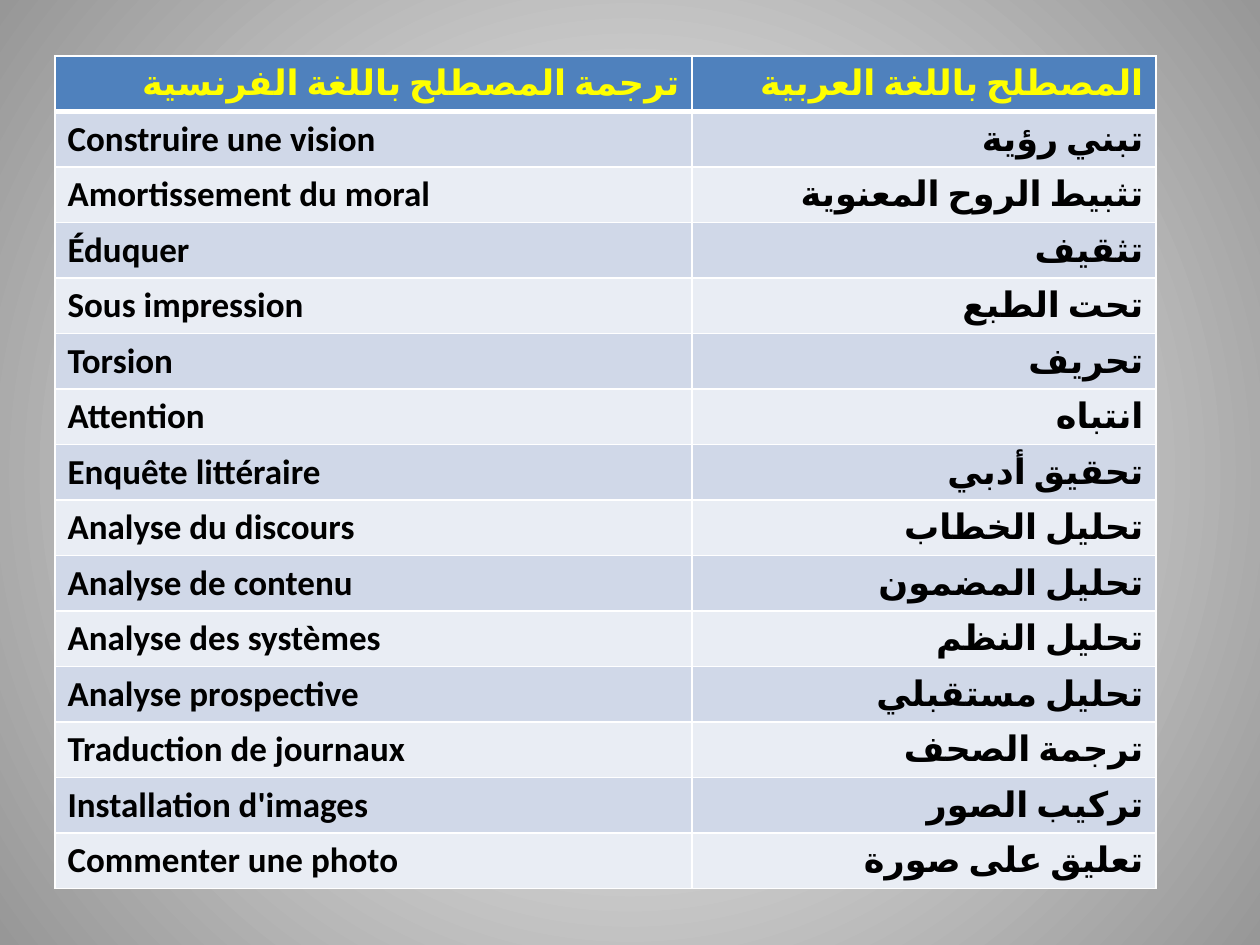
from typing import NamedTuple

from lxml import etree
from pptx import Presentation
from pptx.dml.color import RGBColor
from pptx.enum.lang import MSO_LANGUAGE_ID
from pptx.enum.text import PP_ALIGN
from pptx.oxml.ns import qn
from pptx.util import Emu, Pt

LEFT, RIGHT = PP_ALIGN.LEFT, PP_ALIGN.RIGHT
ARABIC, FRENCH = MSO_LANGUAGE_ID.ARABIC_ALGERIA, MSO_LANGUAGE_ID.FRENCH
EMU_PER_PX = 914400 / 126
FONT = "Calibri"
COLORS = {
    "header": "4F81BD",
    "header_text": "FFFF00",
    "band_dark": "D0D8E8",
    "band_light": "E9EDF4",
    "text": "000000",
    "border": "FFFFFF",
    "glow": "FFFFFF",
    "edge": "979797",
}


class Term(NamedTuple):
    french: str
    arabic: str


HEADER = Term("ترجمة المصطلح باللغة الفرنسية", "المصطلح باللغة العربية")
TERMS = [
    Term("Construire une vision", "تبني رؤية"),
    Term("Amortissement du moral", "تثبيط الروح المعنوية"),
    Term("Éduquer", "تثقيف"),
    Term("Sous impression", "تحت الطبع"),
    Term("Torsion", "تحريف"),
    Term("Attention", "انتباه"),
    Term("Enquête littéraire", "تحقيق أدبي"),
    Term("Analyse du discours", "تحليل الخطاب"),
    Term("Analyse de contenu", "تحليل المضمون"),
    Term("Analyse des systèmes", "تحليل النظم"),
    Term("Analyse prospective", "تحليل مستقبلي"),
    Term("Traduction de journaux", "ترجمة الصحف"),
    Term("Installation d'images", "تركيب الصور"),
    Term("Commenter une photo", "تعليق على صورة"),
]


def px(value: int) -> Emu:
    return Emu(round(value * EMU_PER_PX))


def rgb(name: str) -> RGBColor:
    return RGBColor.from_string(COLORS[name])


def paint_background(slide) -> None:
    """Fill the slide with a gradient spreading from its centre."""
    fill = slide.background.fill
    fill.gradient()
    for stop, position, color in zip(fill.gradient_stops, (0, 1), ("glow", "edge")):
        stop.position = position
        stop.color.rgb = rgb(color)
    gradient = next(slide.background._cSld.iter(qn("a:gradFill")))
    linear = gradient.find(qn("a:lin"))
    if linear is not None:
        gradient.remove(linear)
    circle = etree.SubElement(gradient, qn("a:path"), path="circle")
    centre = dict.fromkeys("ltrb", "50000")
    etree.SubElement(circle, qn("a:fillToRect"), centre)


def write(cell, text: str, *, color: str, rtl: bool) -> None:
    paragraph = cell.text_frame.paragraphs[0]
    paragraph.alignment = RIGHT if rtl else LEFT
    if rtl:
        paragraph._p.get_or_add_pPr().set("rtl", "1")
    run = paragraph.add_run()
    run.text = text
    run.font.name = FONT
    run.font.size = Pt(20)
    run.font.bold = True
    run.font.color.rgb = rgb(color)
    run.font.language_id = ARABIC if rtl else FRENCH
    # Arabic letters take the complex-script typeface
    etree.SubElement(run._r.get_or_add_rPr(), qn("a:cs"), typeface=FONT)


def set_borders(cell, *, top: int = 1, bottom: int = 1) -> None:
    properties = cell._tc.get_or_add_tcPr()
    widths = {"lnL": 1, "lnR": 1, "lnT": top, "lnB": bottom}
    for index, (side, width) in enumerate(widths.items()):
        line = etree.Element(qn(f"a:{side}"), w=str(Pt(width)))
        solid = etree.SubElement(line, qn("a:solidFill"))
        etree.SubElement(solid, qn("a:srgbClr"), val=COLORS["border"])
        properties.insert(index, line)


def fill_row(table, row: int, term: Term) -> None:
    is_header = row == 0
    band = "header" if is_header else "band_dark" if row % 2 else "band_light"
    for column, text in enumerate(term):
        cell = table.cell(row, column)
        cell.fill.solid()
        cell.fill.fore_color.rgb = rgb(band)
        # The rule under the header is shared with the first term row
        set_borders(cell, top=3 if row == 1 else 1, bottom=3 if is_header else 1)
        write(cell, text, color="header_text" if is_header else "text",
              rtl=is_header or column == 1)


def add_glossary(slide) -> None:
    rows = [HEADER, *TERMS]
    widths = (637, 464)
    frame = slide.shapes.add_table(len(rows), len(widths), px(55), px(56),
                                   px(sum(widths)), px(833))
    table = frame.table
    table.first_row = table.horz_banding = False
    for column, width in zip(table.columns, widths):
        column.width = px(width)
    for index, term in enumerate(rows):
        fill_row(table, index, term)


def main() -> None:
    deck = Presentation()
    deck.slide_width, deck.slide_height = px(1260), px(945)
    slide = deck.slides.add_slide(deck.slide_layouts[6])

    # Background
    paint_background(slide)

    # Glossary table
    add_glossary(slide)

    deck.save("out.pptx")


if __name__ == "__main__":
    main()
